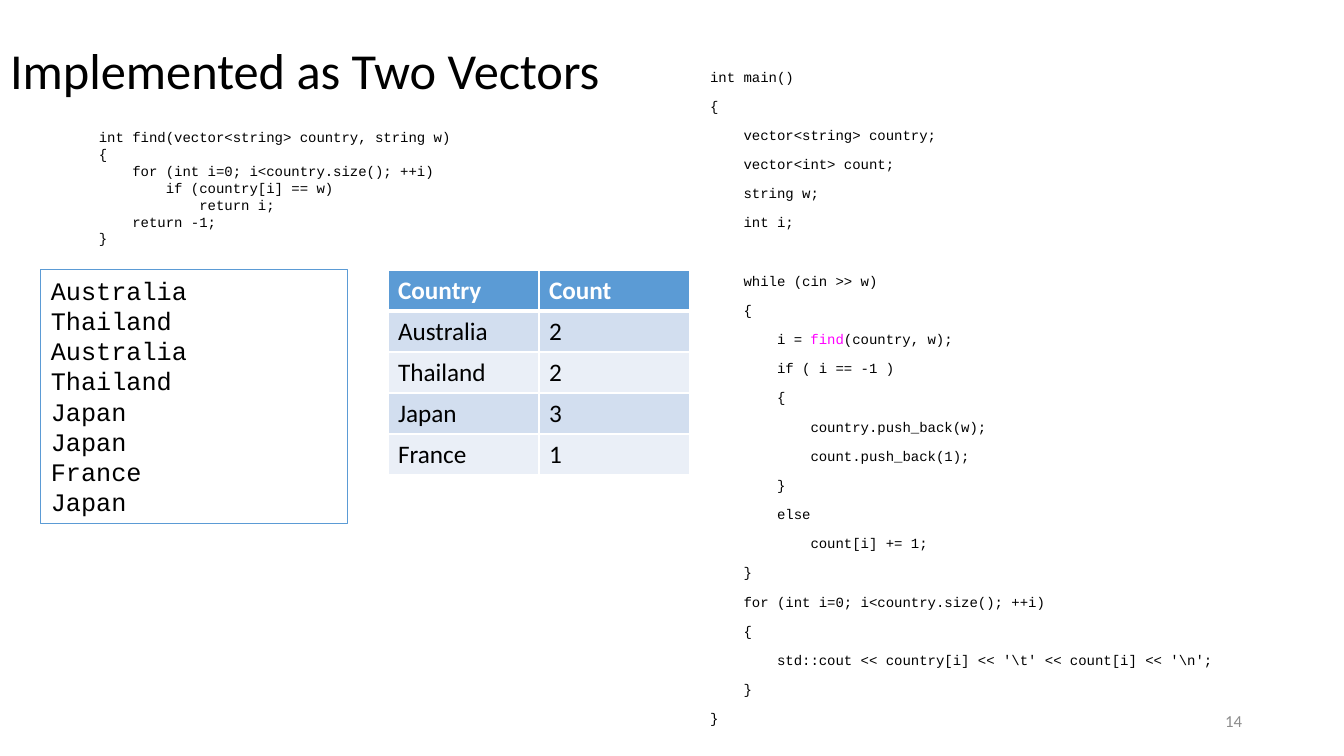
from lxml.etree import SubElement
from pptx import Presentation
from pptx.dml.color import RGBColor
from pptx.enum.shapes import MSO_SHAPE
from pptx.enum.text import MSO_ANCHOR, MSO_AUTO_SIZE, PP_ALIGN
from pptx.oxml.ns import qn
from pptx.util import Emu, Pt

# Content
TITLE = "Implemented as Two Vectors"
PAGE = "14"
HIGHLIGHT = "find"
MAIN_CODE = r"""int main()
{
    vector<string> country;
    vector<int> count;
    string w;
    int i;

    while (cin >> w)
    {
        i = find(country, w);
        if ( i == -1 )
        {
            country.push_back(w);
            count.push_back(1);
        }
        else
            count[i] += 1;
    }
    for (int i=0; i<country.size(); ++i)
    {
        std::cout << country[i] << '\t' << count[i] << '\n';
    }
}"""
FIND_CODE = """int find(vector<string> country, string w)
{
    for (int i=0; i<country.size(); ++i)
        if (country[i] == w)
            return i;
    return -1;
}"""
INPUT_WORDS = ["Australia", "Thailand", "Australia", "Thailand",
               "Japan", "Japan", "France", "Japan"]
COUNTS = [("Country", "Count"), ("Australia", "2"), ("Thailand", "2"),
          ("Japan", "3"), ("France", "1")]

# Boxes in px: left, top, width, height
SLIDE = (1344, 756)
TITLE_BOX = (0, 0, 642, 146)
MAIN_BOX = (700, 65, 551, 617)
PAGE_BOX = (950, 701, 302, 40)
FIND_BOX = (89, 124, 451, 129)
INPUT_BOX = (41, 270, 307, 254)
TABLE_BOX = (388, 270, 302, 205)

BLACK = RGBColor(0x00, 0x00, 0x00)
WHITE = RGBColor(0xFF, 0xFF, 0xFF)
GRAY = RGBColor(0x8C, 0x8C, 0x8C)
BLUE = RGBColor(0x5B, 0x9B, 0xD5)
MAGENTA = RGBColor(0xFF, 0x00, 0xFF)
BANDS = [RGBColor(0xEA, 0xEF, 0xF7), RGBColor(0xD2, 0xDE, 0xEF)]
SANS, MONO = "Calibri", "Courier New"


def px(*lengths):
    return [Emu(round(length * 914400 / 100.8)) for length in lengths]


def place(shape, box):
    shape.left, shape.top, shape.width, shape.height = px(*box)


def style(frame, size, face, color=BLACK, align=PP_ALIGN.LEFT, bold=False):
    for paragraph in frame.paragraphs:
        paragraph.alignment = align
        for font in [paragraph.font] + [run.font for run in paragraph.runs]:
            font.size, font.name, font.bold = Pt(size), face, bold
            font.color.rgb = color


def add_border(cell, side, points):
    line = SubElement(cell._tc.get_or_add_tcPr(), qn(f"a:{side}"), w=str(Pt(points)))
    fill = SubElement(line, qn("a:solidFill"))
    SubElement(fill, qn("a:srgbClr"), val=str(WHITE))


def main():
    prs = Presentation()
    prs.slide_width, prs.slide_height = px(*SLIDE)
    slide = prs.slides.add_slide(prs.slide_layouts[1])
    shapes = slide.shapes

    # Title
    title = shapes.title
    place(title, TITLE_BOX)
    title.text_frame.text = TITLE
    title.text_frame.vertical_anchor = MSO_ANCHOR.MIDDLE
    title.text_frame.paragraphs[0].line_spacing = 0.9
    style(title.text_frame, 36, SANS)

    # Main program, with the call to find picked out
    program = slide.placeholders[1]
    place(program, MAIN_BOX)
    frame = program.text_frame
    frame.text = MAIN_CODE
    frame.auto_size = MSO_AUTO_SIZE.NONE
    for paragraph in frame.paragraphs:
        paragraph.line_spacing, paragraph.space_before = 0.9, Pt(10)
        properties = paragraph._p.get_or_add_pPr()
        properties.set("marL", "0")
        properties.set("indent", "0")
        SubElement(properties, qn("a:buNone"))
        before, match, after = paragraph.text.partition(HIGHLIGHT)
        if match:
            paragraph.clear()
            for part in (before, match, after):
                paragraph.add_run().text = part
    style(frame, 10, MONO)
    for paragraph in frame.paragraphs:
        for run in paragraph.runs:
            if run.text == HIGHLIGHT:
                run.font.color.rgb = MAGENTA

    # Page number
    page = shapes.add_textbox(*px(*PAGE_BOX)).text_frame
    page.text = PAGE
    page.word_wrap = True
    page.vertical_anchor = MSO_ANCHOR.MIDDLE
    style(page, 12, SANS, GRAY, PP_ALIGN.RIGHT)

    # Find function
    finder = shapes.add_textbox(*px(*FIND_BOX)).text_frame
    finder.text = FIND_CODE
    finder.word_wrap = True
    style(finder, 10, MONO)

    # Input words
    words = shapes.add_shape(MSO_SHAPE.RECTANGLE, *px(*INPUT_BOX))
    words.shadow.inherit = False
    words.fill.background()
    words.line.color.rgb, words.line.width = BLUE, Pt(0.75)
    words.text_frame.text = "\n".join(INPUT_WORDS)
    words.text_frame.word_wrap = True
    words.text_frame.vertical_anchor = MSO_ANCHOR.TOP
    style(words.text_frame, 18, MONO)

    # Table of counts
    table = shapes.add_table(len(COUNTS), len(COUNTS[0]), *px(*TABLE_BOX)).table
    for r, row in enumerate(COUNTS):
        header = r == 0
        for c, value in enumerate(row):
            cell = table.cell(r, c)
            cell.text_frame.text = value
            style(cell.text_frame, 18, SANS, WHITE if header else BLACK, bold=header)
            for side in ("lnL", "lnR", "lnT", "lnB"):
                heavy = (r, side) in ((0, "lnB"), (1, "lnT"))
                add_border(cell, side, 3 if heavy else 1)
            cell.fill.solid()
            cell.fill.fore_color.rgb = BLUE if header else BANDS[r % 2]

    prs.save("out.pptx")


if __name__ == "__main__":
    main()
